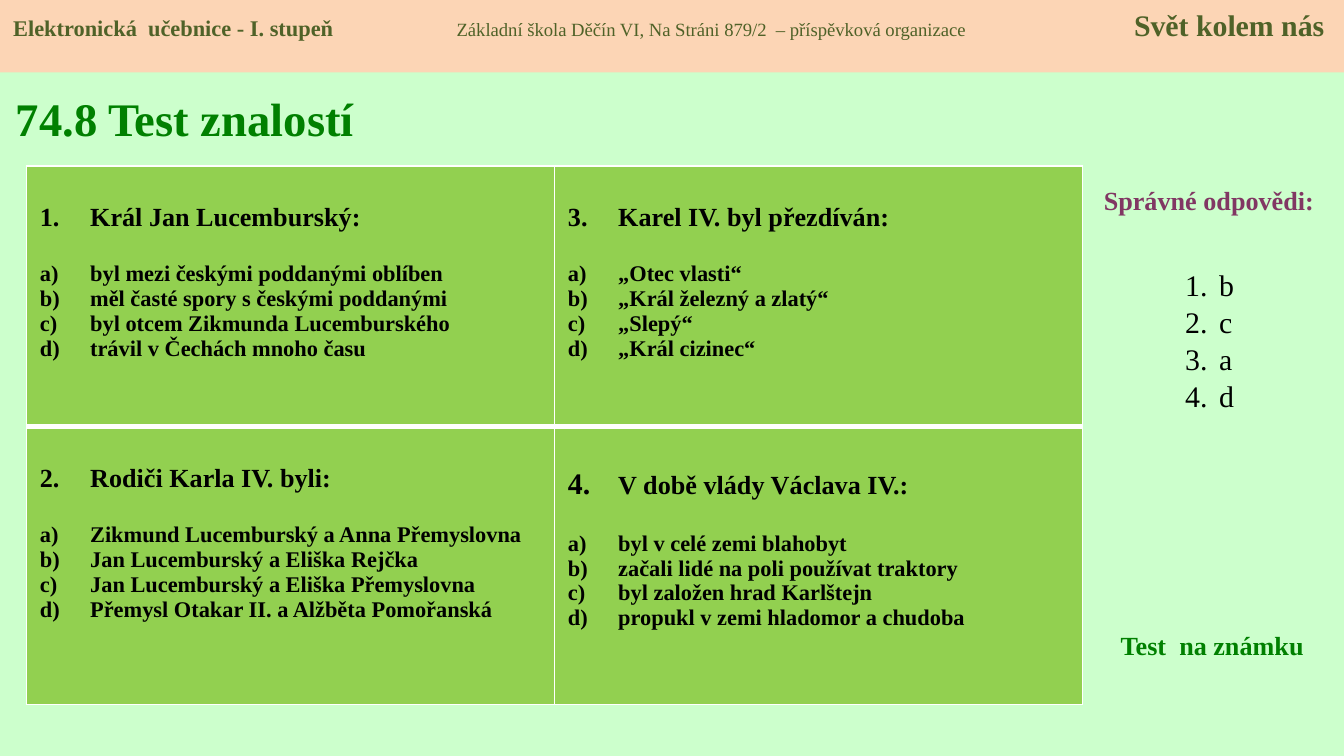
from typing import NamedTuple

from lxml import etree
from pptx import Presentation
from pptx.dml.color import RGBColor
from pptx.enum.shapes import MSO_SHAPE as Shape
from pptx.enum.text import MSO_ANCHOR as Anchor, PP_ALIGN as Align
from pptx.oxml.ns import qn
from pptx.util import Cm, Pt

FONT = "Times New Roman"
GREEN, PURPLE, OLIVE, BLACK, WHITE = "008000", "813763", "4F6228", "000000", "FFFFFF"
HANGING = Cm(0.95)


class Question(NamedTuple):
    number: str
    text: str
    options: list[str]
    number_size: int = 14
    top: float = 0.7


class Label(NamedTuple):
    text: str
    left: float
    top: float
    width: float
    height: float
    size: int
    color: str
    align: Align = Align.LEFT


QUESTIONS = [
    [
        Question("1.", "Král Jan Lucemburský:", [
            "byl mezi českými poddanými oblíben",
            "měl časté spory s českými poddanými",
            "byl otcem Zikmunda Lucemburského",
            "trávil v Čechách mnoho času"]),
        Question("3.", "Karel IV. byl přezdíván:", [
            "„Otec vlasti“", "„Král železný a zlatý“", "„Slepý“", "„Král cizinec“"]),
    ],
    [
        Question("2.", "Rodiči Karla IV. byli:", [
            "Zikmund Lucemburský a Anna Přemyslovna",
            "Jan Lucemburský a Eliška Rejčka",
            "Jan Lucemburský a Eliška Přemyslovna",
            "Přemysl Otakar II. a Alžběta Pomořanská"]),
        Question("4.", "V době vlády Václava IV.:", [
            "byl v celé zemi blahobyt",
            "začali lidé na poli používat traktory",
            "byl založen hrad Karlštejn",
            "propukl v zemi hladomor a chudoba"], 16, 0.78),
    ],
]

LABELS = [
    Label("74.8 Test znalostí", 0.05, 1.4, 8.1, 1.65, 25, GREEN),
    Label("Správné odpovědi:", 20.45, 3.35, 4.8, 0.86, 14, PURPLE, Align.CENTER),
    Label("Test  na známku", 20.93, 11.76, 3.99, 0.86, 14, GREEN),
]


def rgb(color: str) -> RGBColor:
    return RGBColor.from_string(color)


def paint(target, color: str) -> None:
    target.fill.solid()
    target.fill.fore_color.rgb = rgb(color)


def style(font, size: float, color: str, bold: bool = False) -> None:
    font.name, font.size, font.bold = FONT, Pt(size), bold
    font.color.rgb = rgb(color)


def add_span(para, text: str, size: float, color: str, bold: bool = False) -> None:
    span = para.add_run()
    span.text = text
    style(span.font, size, color, bold)


def next_para(frame, first: bool):
    return frame.paragraphs[0] if first else frame.add_paragraph()


def set_indent(para, indent: int, numbering: str = "") -> None:
    props = para._p.get_or_add_pPr()
    props.set("marL", str(int(indent)))
    props.set("indent", str(-int(indent)))
    if numbering:
        etree.SubElement(props, qn("a:buAutoNum"), type=numbering)


def set_tabs(para, stops: list[tuple[float, str]]) -> None:
    tabs = etree.SubElement(para._p.get_or_add_pPr(), qn("a:tabLst"))
    for position, align in stops:
        etree.SubElement(tabs, qn("a:tab"), pos=str(int(Cm(position))), algn=align)


def set_borders(cell, bottom: float) -> None:
    props = cell._tc.get_or_add_tcPr()
    widths = {"a:lnL": 1, "a:lnR": 1, "a:lnT": 1, "a:lnB": bottom}
    for index, (tag, width) in enumerate(widths.items()):
        line = etree.Element(qn(tag), w=str(int(Pt(width))))
        fill = etree.SubElement(line, qn("a:solidFill"))
        etree.SubElement(fill, qn("a:srgbClr"), val=WHITE)
        props.insert(index, line)


def add_label(page, label: Label) -> None:
    box = page.shapes.add_textbox(
        Cm(label.left), Cm(label.top), Cm(label.width), Cm(label.height))
    frame = box.text_frame
    frame.vertical_anchor = Anchor.MIDDLE
    para = frame.paragraphs[0]
    para.text, para.alignment = label.text, label.align
    style(para.font, label.size, label.color, True)


def fill_question(cell, question: Question) -> None:
    cell.margin_top = Cm(question.top)
    heading = cell.text_frame.paragraphs[0]
    set_indent(heading, HANGING)
    heading.space_after = Pt(16)
    add_span(heading, question.number, question.number_size, BLACK, True)
    add_span(heading, "\t" + question.text, 14, BLACK, True)
    for option in question.options:
        para = cell.text_frame.add_paragraph()
        set_indent(para, HANGING, "alphaLcParenR")
        add_span(para, option, 12, BLACK, True)


def add_questions(page) -> None:
    table = page.shapes.add_table(2, 2, Cm(0.5), Cm(3.14), Cm(19.96), Cm(10.18)).table
    table.first_row = table.horz_banding = False
    table.rows[0].height, table.rows[1].height = Cm(4.93), Cm(5.25)
    for row, questions in enumerate(QUESTIONS):
        for column, question in enumerate(questions):
            cell = table.cell(row, column)
            paint(cell, "92D050")
            set_borders(cell, 1 if row else 3)
            fill_question(cell, question)
    # The shared edge has the same width from both sides
    for column in range(2):
        table.cell(1, column)._tc.tcPr.find(qn("a:lnT")).set("w", str(int(Pt(3))))


def add_answers(page, answers: str) -> None:
    frame = page.shapes.add_textbox(Cm(22.15), Cm(4.19), Cm(1.4), Cm(5.05)).text_frame
    frame.word_wrap = True
    frame.margin_top = Cm(0.86)
    for index, answer in enumerate(answers):
        para = next_para(frame, index == 0)
        set_indent(para, Cm(0.64), "arabicPeriod")
        para.space_after = Pt(0.6)
        add_span(para, answer, 16, BLACK)


def add_header(page, width: int) -> None:
    band = page.shapes.add_shape(Shape.RECTANGLE, 0, 0, width, Cm(1.37))
    band.shadow.inherit = False
    paint(band, "FCD5B5")
    band.line.fill.background()
    frame = band.text_frame
    frame.vertical_anchor = Anchor.TOP
    para = frame.paragraphs[0]
    para.alignment = Align.LEFT
    set_tabs(para, [(8.38, "l"), (24.78, "r")])
    add_span(para, "Elektronická  učebnice - I. stupeň", 12, OLIVE, True)
    add_span(para, "\tZákladní škola Děčín VI, Na Stráni 879/2  – příspěvková organizace",
             10, OLIVE)
    add_span(para, "\tSvět kolem nás", 16, OLIVE, True)


def main() -> None:
    deck = Presentation()
    deck.slide_width, deck.slide_height = Cm(25.4), Cm(14.29)
    page = deck.slides.add_slide(deck.slide_layouts[6])
    paint(page.background, "CCFFCC")

    # Title and side captions
    for label in LABELS:
        add_label(page, label)

    # Test questions and their key
    add_questions(page)
    add_answers(page, "bcad")

    # Band across the top
    add_header(page, deck.slide_width)
    deck.save("out.pptx")


if __name__ == "__main__":
    main()
